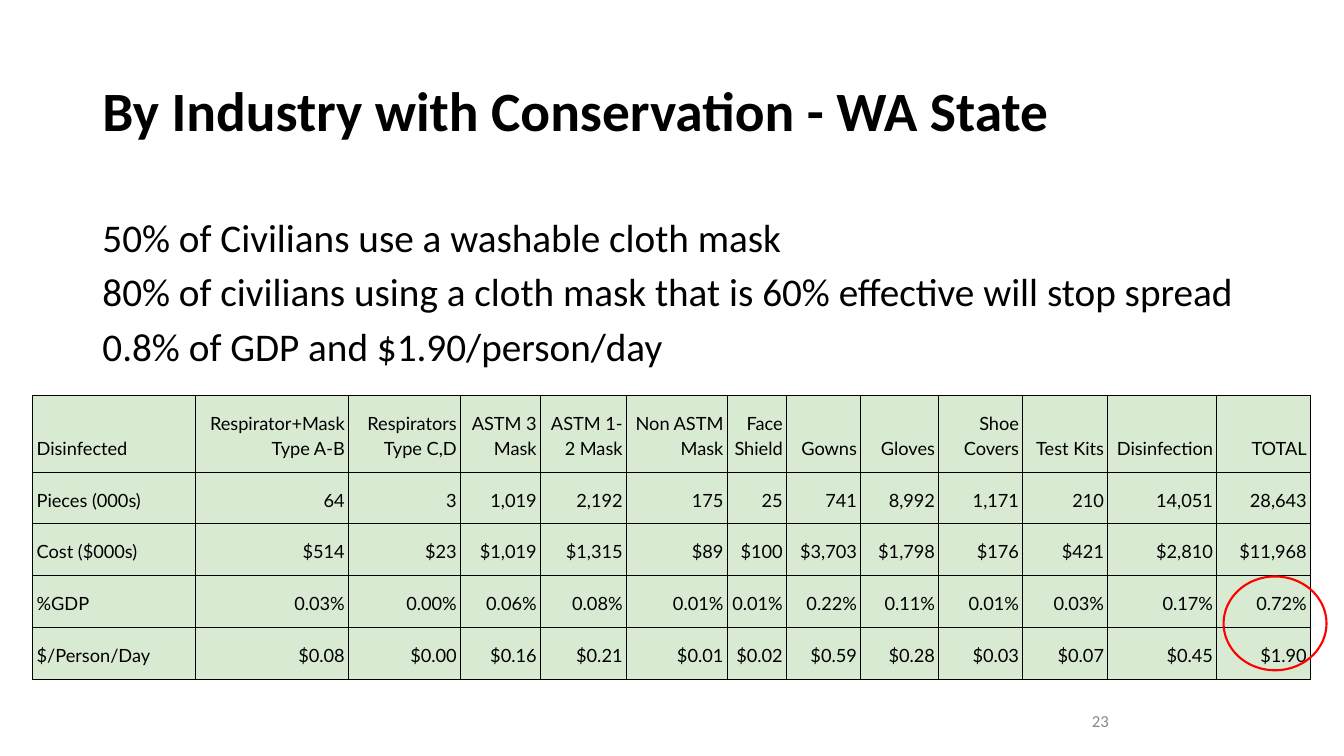
from lxml import etree
from pptx import Presentation
from pptx import util as u
from pptx.dml import color
from pptx.enum import shapes, text
from pptx.oxml import ns


def rgb(value):
    return color.RGBColor.from_string(value)


def style(paragraph, name, size, font_color, bold=False):
    for run in paragraph.runs:
        run.font.name = name
        run.font.size = u.Pt(size)
        run.font.bold = bold
        run.font.color.rgb = rgb(font_color)


presentation = Presentation()
presentation.slide_width = u.Pt(960)
presentation.slide_height = u.Pt(540)
slide = presentation.slides.add_slide(presentation.slide_layouts[1])

title, body = slide.placeholders
for shape, top, height, anchor in [
    (title, 28.8, 104.4, text.MSO_ANCHOR.MIDDLE),
    (body, 144, 342.6, text.MSO_ANCHOR.TOP),
]:
    shape.left, shape.top = u.Pt(66), u.Pt(top)
    shape.width, shape.height = u.Pt(828), u.Pt(height)
    shape.text_frame.auto_size = text.MSO_AUTO_SIZE.NONE
    shape.text_frame.vertical_anchor = anchor

title.text_frame.text = "By Industry with Conservation - WA State"
heading = title.text_frame.paragraphs[0]
heading.alignment = text.PP_ALIGN.LEFT
heading.line_spacing = 0.9
style(heading, "Calibri", 39.6, "000000", bold=True)

body.text_frame.text = (
    "50% of Civilians use a washable cloth mask\n"
    "80% of civilians using a cloth mask that is 60% effective will stop spread\n"
    "0.8% of GDP and $1.90/person/day"
)
for paragraph in body.text_frame.paragraphs:
    paragraph.line_spacing = 1.15
    paragraph.space_before = u.Pt(0)
    properties = paragraph._p.get_or_add_pPr()
    properties.set("marL", "0")
    properties.set("indent", "0")
    etree.SubElement(properties, ns.qn("a:buNone"))
    style(paragraph, "Calibri", 28, "000000")

rows = [
    ["Disinfected", "Respirator+Mask Type A-B", "Respirators Type C,D", "ASTM 3 Mask",
     "ASTM 1-2 Mask", "Non ASTM Mask", "Face Shield", "Gowns", "Gloves",
     "Shoe Covers", "Test Kits", "Disinfection", "TOTAL"],
    ["Pieces (000s)", "64", "3", "1,019", "2,192", "175", "25", "741", "8,992",
     "1,171", "210", "14,051", "28,643"],
    ["Cost ($000s)", "$514", "$23", "$1,019", "$1,315", "$89", "$100", "$3,703",
     "$1,798", "$176", "$421", "$2,810", "$11,968"],
    ["%GDP", "0.03%", "0.00%", "0.06%", "0.08%", "0.01%", "0.01%", "0.22%",
     "0.11%", "0.01%", "0.03%", "0.17%", "0.72%"],
    ["$/Person/Day", "$0.08", "$0.00", "$0.16", "$0.21", "$0.01", "$0.02", "$0.59",
     "$0.28", "$0.03", "$0.07", "$0.45", "$1.90"],
]
column_widths = [116.3, 109.3, 80, 57.1, 61.4, 72, 42.4, 53, 55.8, 60, 60.8, 77.8, 67]
row_heights = [55, 37, 37, 37, 37]

table = slide.shapes.add_table(
    len(rows), len(column_widths), u.Pt(23.4), u.Pt(282.2),
    u.Pt(sum(column_widths)), u.Pt(sum(row_heights)),
).table
table.first_row = False
table.horz_banding = False
for column, width in zip(table.columns, column_widths):
    column.width = u.Pt(width)
for row, height, values in zip(table.rows, row_heights, rows):
    row.height = u.Pt(height)
    for index, (cell, value) in enumerate(zip(row.cells, values)):
        cell.text_frame.text = value
        cell.vertical_anchor = text.MSO_ANCHOR.BOTTOM
        cell.margin_left = cell.margin_right = u.Pt(2.8)
        cell.margin_top = cell.margin_bottom = u.Pt(9.2)
        paragraph = cell.text_frame.paragraphs[0]
        paragraph.alignment = text.PP_ALIGN.RIGHT if index else text.PP_ALIGN.LEFT
        paragraph.line_spacing = 1.15
        style(paragraph, "Lato", 13, "000000")
        cell_properties = cell._tc.get_or_add_tcPr()
        for side in ["a:lnL", "a:lnR", "a:lnT", "a:lnB"]:
            border = etree.SubElement(cell_properties, ns.qn(side), w=str(u.Pt(0.75)))
            border_fill = etree.SubElement(border, ns.qn("a:solidFill"))
            etree.SubElement(border_fill, ns.qn("a:srgbClr"), val="000000")
        cell.fill.solid()
        cell.fill.fore_color.rgb = rgb("D9EAD3")

page_number = slide.shapes.add_textbox(u.Pt(678), u.Pt(500.5), u.Pt(216), u.Pt(28.8))
page_number.text_frame.word_wrap = True
page_number.text_frame.vertical_anchor = text.MSO_ANCHOR.MIDDLE
page_number.text_frame.text = "23"
paragraph = page_number.text_frame.paragraphs[0]
paragraph.alignment = text.PP_ALIGN.CENTER
style(paragraph, "Calibri", 12, "888888")

total_ring = slide.shapes.add_shape(
    shapes.MSO_SHAPE.OVAL, u.Pt(874), u.Pt(411.8), u.Pt(73.5), u.Pt(67)
)
total_ring.shadow.inherit = False
total_ring.fill.background()
total_ring.line.color.rgb = rgb("FF0000")
total_ring.line.width = u.Pt(1.5)

presentation.save("out.pptx")
